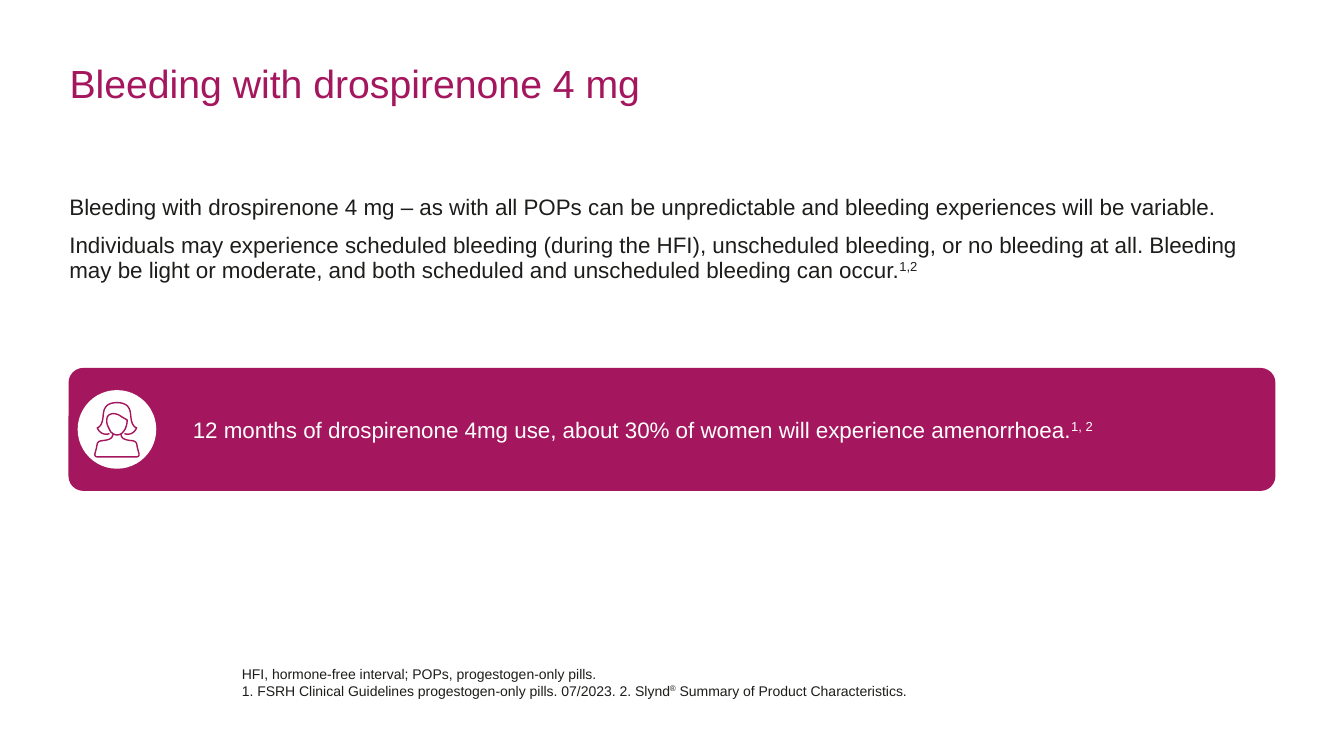
import pptx
import pptx.dml.color
import pptx.enum.shapes
import pptx.enum.text
import pptx.util

RGBColor = pptx.dml.color.RGBColor
Inches = pptx.util.Inches
Pt = pptx.util.Pt
ANCHOR = pptx.enum.text.MSO_ANCHOR
SHAPE = pptx.enum.shapes.MSO_SHAPE

MAGENTA = RGBColor(0xA4, 0x16, 0x5D)
INK = RGBColor(0x1D, 0x1D, 0x1B)
WHITE = RGBColor(0xFF, 0xFF, 0xFF)
FONT = "Arial"

# Icon outlines: start point, then cubic curves, in hundredths of the disc
# diameter from its centre. HAIR and SHOULDERS are left halves.
HAIR = [(0, -34),
        (-7, -34), (-13, -32), (-15.5, -26.5),
        (-18, -22), (-17, -15), (-19, -9),
        (-20.5, -5), (-22, -3), (-25, -2),
        (-22, 5), (-16, 7.5), (-9.5, 5.5)]
SHOULDERS = [(0, 35),
             (-8, 35), (-16, 35), (-25, 35),
             (-27, 35), (-28.5, 34), (-28, 31),
             (-27, 27), (-26, 24), (-25.5, 20.5),
             (-25, 13), (-18, 15), (-13, 13.5),
             (-6.5, 12), (-6, 10), (-4.8, 5.5)]
FACE = [(0, 7),
        (-3, 7), (-6, 5), (-8, 3),
        (-10, -1), (-13, -6), (-13, -10),
        (-13, -15), (-12, -17.5), (-9, -19),
        (-5, -21), (1, -20), (6, -16),
        (8, -15), (11, -13), (13, -12),
        (13, -6), (11, 0), (8, 3),
        (6, 6), (3, 7), (0, 7)]


def write(tf, paragraphs, size, color, spacing=None, before=0):
    """Fill a frame; each paragraph is a list of (text, is_superscript)."""
    tf.word_wrap = True
    for i, parts in enumerate(paragraphs):
        p = tf.add_paragraph() if i else tf.paragraphs[0]
        p.alignment = pptx.enum.text.PP_ALIGN.LEFT
        p.space_before = Pt(before if i else 0)
        if spacing:
            p.line_spacing = spacing
        for text, is_super in parts:
            r = p.add_run()
            r.text = text
            r.font.name = FONT
            r.font.size = Pt(size)
            r.font.color.rgb = color
            if is_super:
                r.font._element.set("baseline", "30000")


def add_title(slide, box):
    sp = slide.shapes.title
    sp.left, sp.top, sp.width, sp.height = (Inches(v) for v in box)
    tf = sp.text_frame
    tf.vertical_anchor = ANCHOR.TOP
    tf.auto_size = pptx.enum.text.MSO_AUTO_SIZE.NONE
    write(tf, [[("Bleeding with drospirenone 4 mg", False)]], 28, MAGENTA, 0.9)


def add_text(slide, box, paragraphs, size, **spacing):
    sp = slide.shapes.add_textbox(*(Inches(v) for v in box))
    write(sp.text_frame, paragraphs, size, INK, **spacing)


def add_filled(shapes, kind, box, color):
    sp = shapes.add_shape(kind, *(Inches(v) for v in box))
    sp.shadow.inherit = False
    sp.fill.solid()
    sp.fill.fore_color.rgb = color
    sp.line.fill.background()
    return sp


def sample(points, steps=8):
    """Turn a chain of cubic curves into a list of points."""
    out = [points[0]]
    for i in range(0, len(points) - 1, 3):
        a, b, c, d = points[i:i + 4]
        for n in range(1, steps + 1):
            t = n / steps
            u = 1 - t
            out.append(tuple(u**3 * a[k] + 3 * u * u * t * b[k]
                             + 3 * u * t * t * c[k] + t**3 * d[k]
                             for k in (0, 1)))
    return out


def mirrored(half):
    return half[::-1] + [(-x, y) for x, y in half[1:]]


def add_woman_icon(slide, left, top, size):
    group = slide.shapes.add_group_shape()
    add_filled(group.shapes, SHAPE.OVAL, (left, top, size, size), WHITE)
    outlines = [(mirrored(sample(HAIR)), False),
                (mirrored(sample(SHOULDERS)), False),
                (sample(FACE), True)]
    for outline, closed in outlines:
        points = [(Inches(left + size * (0.5 + x / 100)),
                   Inches(top + size * (0.5 + y / 100))) for x, y in outline]
        builder = group.shapes.build_freeform(*points[0], scale=1.0)
        builder.add_line_segments(points[1:], close=closed)
        sp = builder.convert_to_shape()
        sp.shadow.inherit = False
        sp.fill.background()
        sp.line.color.rgb = MAGENTA
        sp.line.width = Pt(1)


def add_banner(slide, box):
    left, top, width, height = box
    sp = add_filled(slide.shapes, SHAPE.ROUNDED_RECTANGLE, box, MAGENTA)
    sp.adjustments[0] = 0.12
    tf = sp.text_frame
    tf.margin_left = Inches(1.19)
    tf.vertical_anchor = ANCHOR.MIDDLE
    write(tf, [[("12 months of drospirenone 4mg use, about 30% of women "
                 "will experience amenorrhoea.", False), ("1, 2", True)]],
          16, WHITE)
    disc = 0.78
    add_woman_icon(slide, left + 0.09, top + (height - disc) / 2, disc)


def main():
    prs = pptx.Presentation()
    prs.slide_width, prs.slide_height = Inches(13.33), Inches(7.5)
    slide = prs.slides.add_slide(prs.slide_layouts[5])

    add_title(slide, (0.59, 0.59, 12.06, 0.4))
    # Introduction
    add_text(slide, (0.59, 1.9, 12.13, 1.5), [
        [("Bleeding with drospirenone 4 mg – as with all POPs can be "
          "unpredictable and bleeding experiences will be variable.", False)],
        [("Individuals may experience scheduled bleeding (during the HFI), "
          "unscheduled bleeding, or no bleeding at all. Bleeding may be light "
          "or moderate, and both scheduled and unscheduled bleeding can "
          "occur.", False), ("1,2", True)],
    ], 16, spacing=0.9, before=10)
    # Key message
    add_banner(slide, (0.68, 3.65, 11.97, 1.22))
    # Abbreviations and references
    add_text(slide, (2.3, 6.55, 10.51, 0.61), [
        [("HFI, hormone-free interval; POPs, progestogen-only pills.", False)],
        [("1. FSRH Clinical Guidelines progestogen-only pills. 07/2023. "
          "2. Slynd", False), ("®", True),
         (" Summary of Product Characteristics.", False)],
    ], 10)

    prs.save("out.pptx")


if __name__ == "__main__":
    main()
